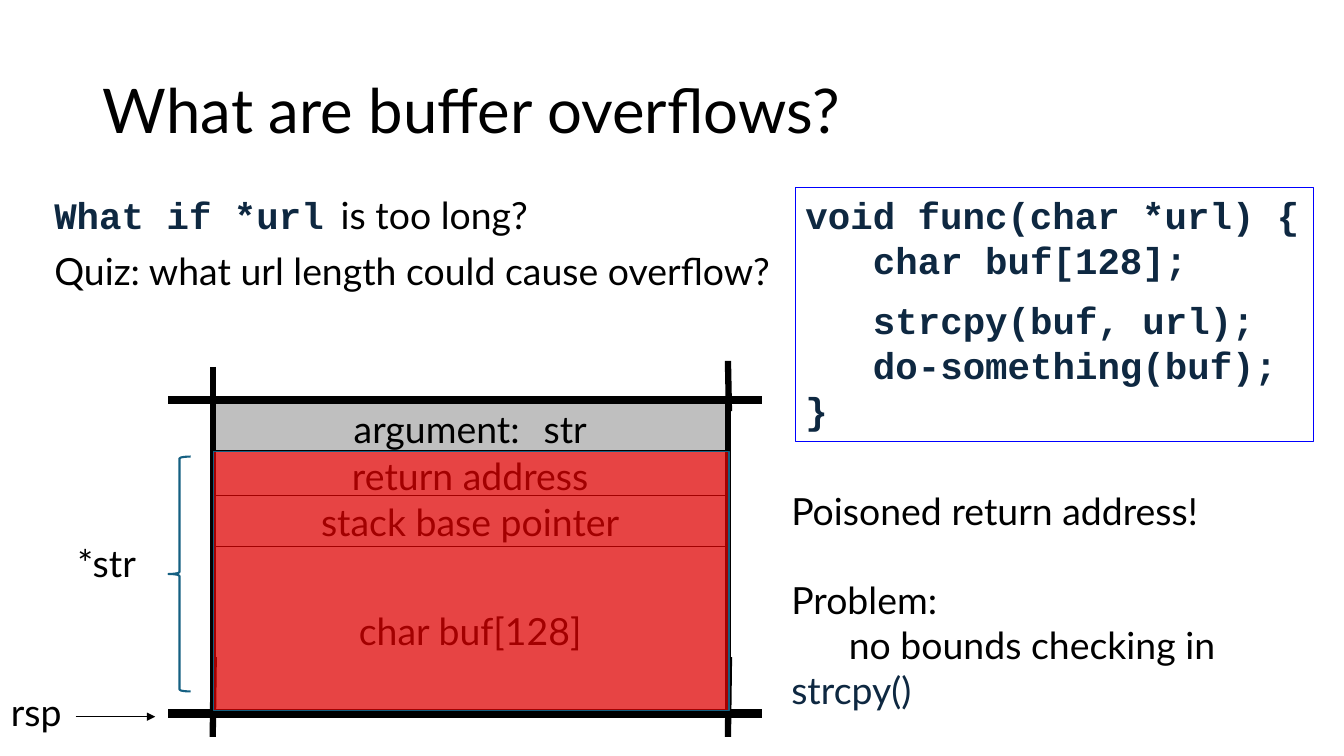
from lxml.etree import SubElement
from pptx import Presentation
from pptx.dml.color import RGBColor
from pptx.enum.shapes import MSO_CONNECTOR, MSO_SHAPE
from pptx.enum.text import MSO_ANCHOR, MSO_AUTO_SIZE, PP_ALIGN
from pptx.oxml.ns import qn
from pptx.util import Pt

PX = 9144  # 100 px to the inch
COLORS = {"black": "000000", "navy": "0E2841", "blue": "0000FF",
          "gray": "BFBFBF", "red": "FF0000", "teal": "156082"}
BODY_SIZE = 26.7


def add_run(paragraph, text, color="black", font="Lato", size=BODY_SIZE, bold=False, spacing=0):
    """Append a formatted run; spacing widens its letters, in points."""
    run = paragraph.add_run()
    run.text = text
    run.font.name = font
    run.font.size = Pt(size)
    run.font.bold = bold
    run.font.color.rgb = RGBColor.from_string(COLORS[color])
    if spacing:
        run._r.get_or_add_rPr().set("spc", str(spacing * 100))


def add_box(kind, bounds, fill=None, line=None, width=0.75):
    """Add a preset shape, or a text box when kind is None."""
    box = [value * PX for value in bounds]
    if kind is None:
        shape = slide.shapes.add_textbox(*box)
    else:
        shape = slide.shapes.add_shape(kind, *box)
        shape.shadow.inherit = False
        shape.line.color.rgb = RGBColor.from_string(COLORS[line])
        shape.line.width = Pt(width)
        if fill:
            shape.fill.solid()
            shape.fill.fore_color.rgb = RGBColor.from_string(COLORS[fill])
        else:
            shape.fill.background()
    shape.text_frame.word_wrap = False
    shape.text_frame.vertical_anchor = MSO_ANCHOR.TOP
    shape.text_frame.paragraphs[0].alignment = PP_ALIGN.LEFT
    return shape


presentation = Presentation()
presentation.slide_width = 1333 * PX
presentation.slide_height = 750 * PX
slide = presentation.slides.add_slide(presentation.slide_layouts[5])

title = slide.shapes.title
title.left, title.top, title.width, title.height = [value * PX for value in (92, 40, 1150, 145)]
title.text_frame.auto_size = MSO_AUTO_SIZE.NONE
title.text_frame.vertical_anchor = MSO_ANCHOR.MIDDLE
paragraph = title.text_frame.paragraphs[0]
paragraph.alignment = PP_ALIGN.LEFT
paragraph.line_spacing = 0.9
add_run(paragraph, "What are buffer overflows?", size=44)

# Code listing: text, indented, space before in points
code_frame = add_box(MSO_SHAPE.RECTANGLE, (789, 186, 514, 252), line="blue").text_frame
code_lines = [
    ("void func(char *url) {", False, 0),
    ("char buf[128];", True, 0),
    ("strcpy(buf, url);", True, 11),
    ("do-something(buf);", True, 0),
    ("}", False, 0),
]
for index, (text, indented, space) in enumerate(code_lines):
    paragraph = code_frame.add_paragraph() if index else code_frame.paragraphs[0]
    paragraph.alignment = PP_ALIGN.LEFT
    paragraph.space_before = Pt(space)
    if indented:
        paragraph._p.get_or_add_pPr().set("marL", str(67 * PX))
    add_run(paragraph, text, "navy", "Courier New", bold=True)

# Questions
question_frame = add_box(None, (44, 186, 742, 113)).text_frame
paragraph = question_frame.paragraphs[0]
add_run(paragraph, "What if *url", "navy", "Courier New", bold=True)
add_run(paragraph, " ", spacing=5)
add_run(paragraph, "is too long?")
paragraph = question_frame.add_paragraph()
paragraph.space_before = Pt(8)
add_run(paragraph, "Quiz: what url length could cause overflow?")

# Stack frame
stack_cells = [
    (397, 56, ["argument:", "str"]),
    (447, 50, ["return address"]),
    (492, 50, ["stack base pointer"]),
    (542, 167, ["char buf[128]"]),
]
for top, height, words in stack_cells:
    cell = add_box(MSO_SHAPE.RECTANGLE, (211, top, 511, height), "gray", "black")
    cell.text_frame.vertical_anchor = MSO_ANCHOR.MIDDLE
    paragraph = cell.text_frame.paragraphs[0]
    paragraph.alignment = PP_ALIGN.CENTER
    for index, word in enumerate(words):
        if index:
            add_run(paragraph, " ", spacing=10)
        add_run(paragraph, word)

pointer_paragraph = add_box(None, (0, 679, 72, 55)).text_frame.paragraphs[0]
pointer_paragraph.alignment = PP_ALIGN.CENTER
add_run(pointer_paragraph, "rsp")

# Stack pointer arrow, then the rails that run past the frame
lines = [
    (75, 711, 154, 711, 0.75, True),
    (167, 708, 756, 708, 6, False),
    (167, 397, 756, 397, 6, False),
    (211, 364, 211, 408, 4.5, False),
    (722, 358, 723, 408, 4.5, False),
    (212, 652, 211, 731, 4.5, False),
    (723, 652, 722, 731, 4.5, False),
]
for x1, y1, x2, y2, width, arrow in lines:
    connector = slide.shapes.add_connector(
        MSO_CONNECTOR.STRAIGHT, x1 * PX, y1 * PX, x2 * PX, y2 * PX)
    connector.line.color.rgb = RGBColor.from_string(COLORS["black"])
    connector.line.width = Pt(width)
    if arrow:
        SubElement(connector.line._get_or_add_ln(), qn("a:tailEnd"), type="triangle")
    SubElement(connector._element.spPr, qn("a:effectLst"))

add_box(MSO_SHAPE.RECTANGLE, (211, 397, 511, 311), line="black", width=4.5)
overflow = add_box(MSO_SHAPE.RECTANGLE, (212, 448, 511, 257), "red", "teal", 1)
overflow_color = overflow._element.spPr.find(qn("a:solidFill"))[0]
SubElement(overflow_color, qn("a:alpha"), val="64000")

# Extent of the copied string
add_box(MSO_SHAPE.LEFT_BRACE, (167, 453, 22, 233), line="teal", width=1.5)
add_run(add_box(None, (67, 531, 79, 55)).text_frame.paragraphs[0], "*str")

# Consequence and cause
problem_frame = add_box(None, (775, 479, 563, 190)).text_frame
problem_frame.word_wrap = True
add_run(problem_frame.paragraphs[0], "Poisoned return address!")
paragraph = problem_frame.add_paragraph()
paragraph.space_before = Pt(32)
add_run(paragraph, "Problem:")
paragraph = problem_frame.add_paragraph()
paragraph._p.get_or_add_pPr().set("indent", str(57 * PX))
add_run(paragraph, "no bounds checking in")
paragraph.add_line_break()
add_run(paragraph, "strcpy()", "navy")

presentation.save("out.pptx")
